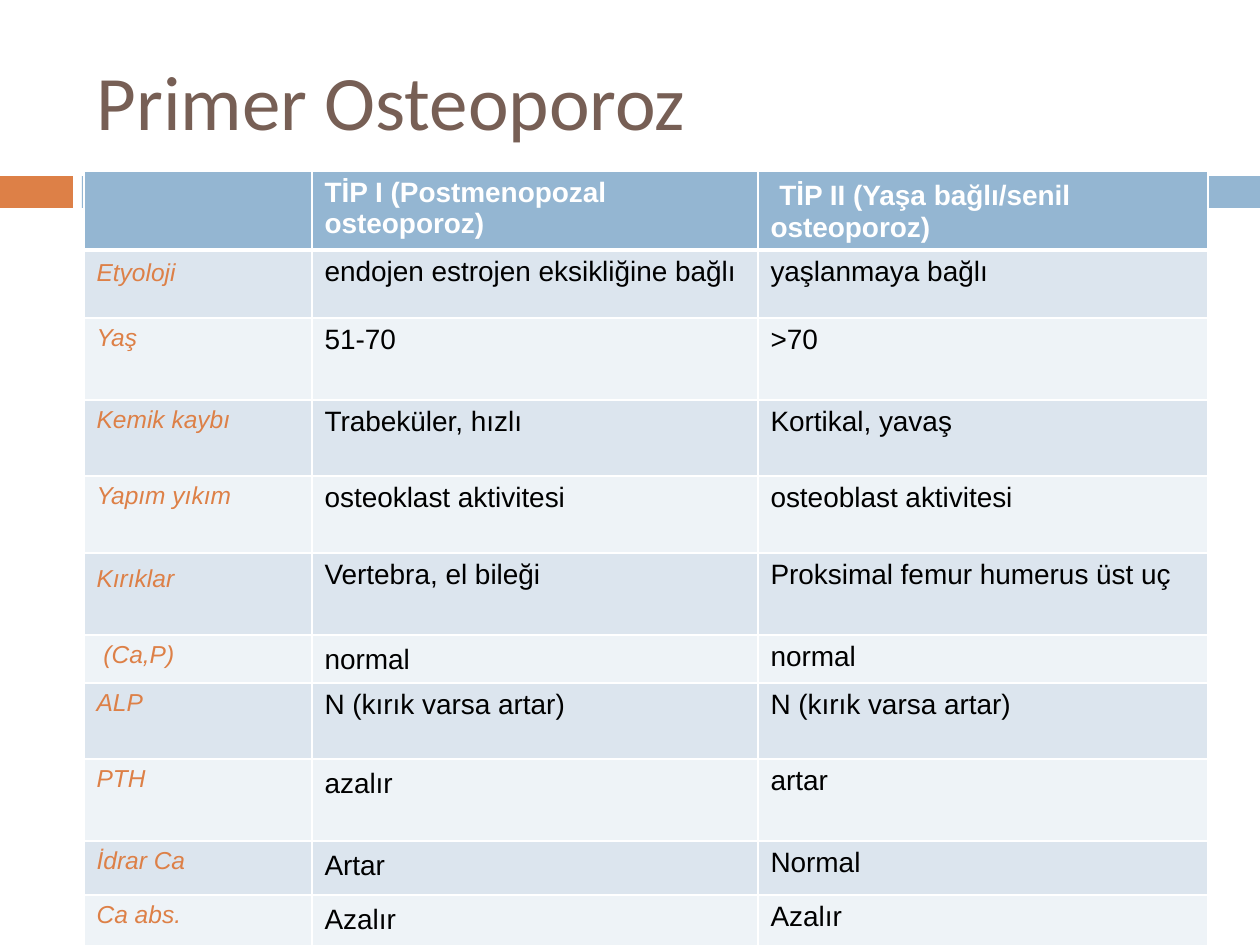
import dataclasses
import pptx
import pptx.dml.color
import pptx.enum.shapes
import pptx.enum.text
import pptx.oxml
import pptx.oxml.ns
import pptx.util


@dataclasses.dataclass(frozen=True)
class Theme:
    orange: str = "DD8047"
    blue: str = "94B6D2"
    brown: str = "775F55"
    white: str = "FFFFFF"
    black: str = "000000"
    bands: tuple = ("DCE5EE", "EEF3F7")
    head: str = "Calibri"
    body: str = "Arial"
    title: int = 44
    large: int = 18
    text: int = 16
    label: int = 14


def px(count):
    return pptx.util.Emu(round(count * 914400 / 126))


def color(code):
    return pptx.dml.color.RGBColor.from_string(code)


class Deck:
    def __init__(self, theme):
        self.theme = theme
        self.file = pptx.Presentation()
        self.file.slide_width, self.file.slide_height = px(1260), px(945)
        self.slide = self.file.slides.add_slide(self.file.slide_layouts[5])

    def run(self, para, text, size, tint, font, bold=False, italic=False):
        run = para.add_run()
        run.text = text
        run.font.size = pptx.util.Pt(size)
        run.font.name = font
        run.font.bold, run.font.italic = bold, italic
        run.font.color.rgb = color(tint)

    def title(self, text, left, top, width, height):
        shape = self.slide.shapes.title
        shape.left, shape.top = px(left), px(top)
        shape.width, shape.height = px(width), px(height)
        frame = shape.text_frame
        frame.word_wrap = True
        frame.auto_size = pptx.enum.text.MSO_AUTO_SIZE.NONE
        frame.vertical_anchor = pptx.enum.text.MSO_ANCHOR.MIDDLE
        para = frame.paragraphs[0]
        para.alignment = pptx.enum.text.PP_ALIGN.LEFT
        self.run(para, text, self.theme.title, self.theme.brown, self.theme.head)

    def bar(self, left, top, width, height, tint):
        kind = pptx.enum.shapes.MSO_SHAPE.RECTANGLE
        shape = self.slide.shapes.add_shape(
            kind, px(left), px(top), px(width), px(height))
        shape.shadow.inherit = False
        shape.fill.solid()
        shape.fill.fore_color.rgb = color(tint)
        shape.line.fill.background()

    def edge(self, cell, sides):
        props = cell._tc.get_or_add_tcPr()
        space = pptx.oxml.ns.nsdecls("a")
        for place, (side, points) in enumerate(sides.items()):
            line = pptx.oxml.parse_xml(
                f'<a:ln{side} {space} w="{pptx.util.Pt(points)}"><a:solidFill>'
                f'<a:srgbClr val="{self.theme.white}"/></a:solidFill></a:ln{side}>')
            props.insert(place, line)

    def cell(self, cell, runs, fill, sides, drop=0):
        cell.fill.solid()
        cell.fill.fore_color.rgb = color(fill)
        cell.margin_left = cell.margin_right = pptx.util.Inches(0.1)
        cell.margin_top = pptx.util.Inches(0.05) + px(drop)
        cell.margin_bottom = pptx.util.Inches(0.05)
        self.edge(cell, sides)
        for text, size, tint, bold, italic in runs:
            self.run(cell.text_frame.paragraphs[0], text, size, tint,
                     self.theme.body, bold, italic)

    def table(self, left, top, cols, rows, heads, data, drops):
        theme = self.theme
        grid = self.slide.shapes.add_table(
            len(rows), len(cols), px(left), px(top),
            px(sum(cols)), px(sum(rows))).table
        for col, width in zip(grid.columns, cols):
            col.width = px(width)
        for row, height in zip(grid.rows, rows):
            row.height = px(height)
        for c, parts in enumerate(heads):
            runs = [(text, size, theme.white, True, False) for text, size in parts]
            self.cell(grid.cell(0, c), runs, theme.blue,
                      dict(L=1, R=1, T=1, B=3), drops.get((0, c), 0))
        for r, texts in enumerate(data, 1):
            for c, text in enumerate(texts):
                if c == 0:
                    run = (text, theme.label, theme.orange, False, True)
                else:
                    run = (text, theme.text, theme.black, False, False)
                self.cell(grid.cell(r, c), [run], theme.bands[(r - 1) % 2],
                          dict(L=1, R=1, T=3 if r == 1 else 1, B=1),
                          drops.get((r, c), 0))


HEADS = [
    [],
    [("TİP I (Postmenopozal osteoporoz)", Theme.text)],
    [(" ", Theme.large), ("TİP II (Yaşa bağlı/senil osteoporoz)", Theme.text)],
]
DATA = [
    ("Etyoloji", "endojen estrojen eksikliğine bağlı", "yaşlanmaya bağlı"),
    ("Yaş", "51-70", ">70"),
    ("Kemik kaybı", "Trabeküler, hızlı", "Kortikal, yavaş"),
    ("Yapım yıkım", "osteoklast aktivitesi", "osteoblast aktivitesi"),
    ("Kırıklar", "Vertebra, el bileği", "Proksimal femur humerus üst uç"),
    (" (Ca,P)", "normal", "normal"),
    ("ALP", "N (kırık varsa artar)", "N (kırık varsa artar)"),
    ("PTH", "azalır", "artar"),
    ("İdrar Ca", "Artar", "Normal"),
    ("Ca abs.", "Azalır", "Azalır"),
]
COLS = [228, 446, 450]
ROWS = [78, 68, 82, 76, 77, 82, 48, 76, 82, 54, 64]
DROPS = {(1, 0): 3, (5, 0): 6, (6, 1): 3, (8, 1): 3, (9, 1): 3, (10, 1): 3}


def main():
    theme = Theme()
    deck = Deck(theme)
    deck.bar(0, 176, 73, 32, theme.orange)
    deck.bar(82, 176, 1178, 32, theme.blue)
    deck.title("Primer Osteoporoz", 84, 32, 1124, 136)
    deck.table(84, 171, COLS, ROWS, HEADS, DATA, DROPS)
    deck.file.save("out.pptx")


if __name__ == "__main__":
    main()
